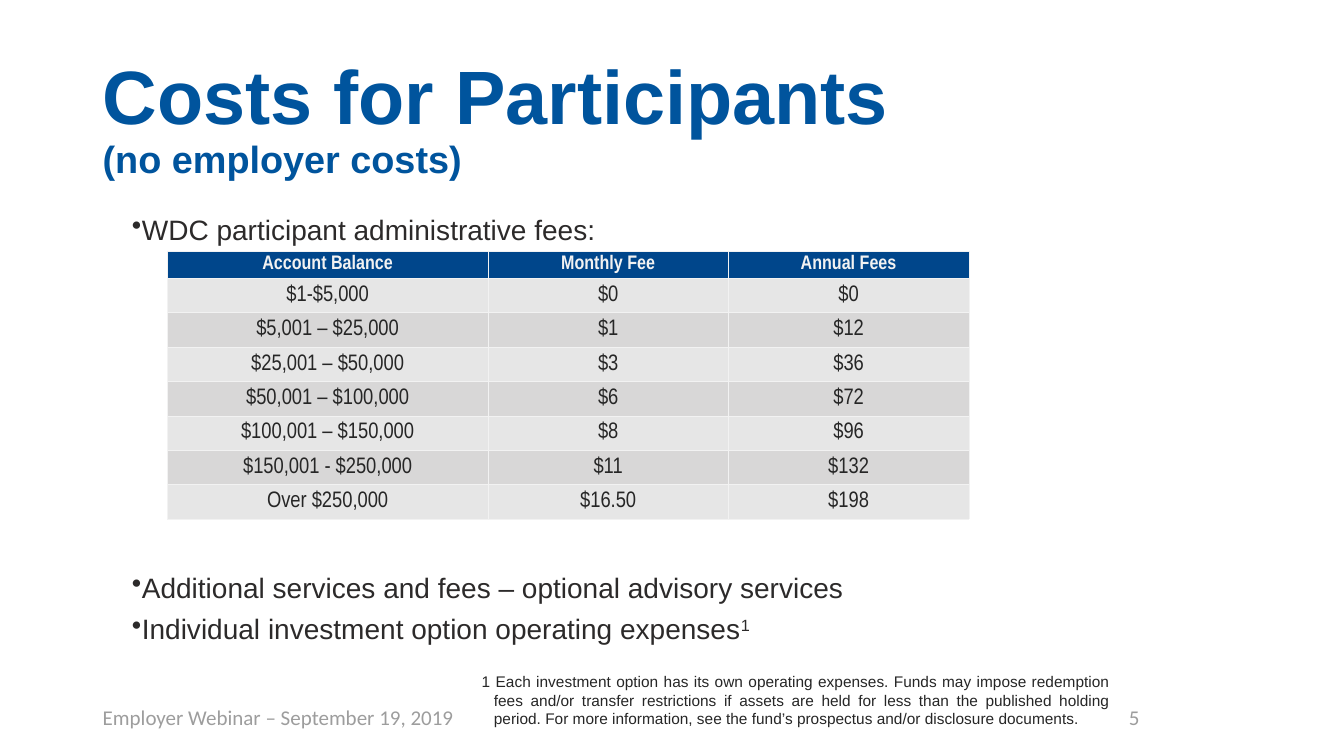
from lxml import etree
from pptx import Presentation
from pptx.dml.color import RGBColor
from pptx.enum.text import MSO_ANCHOR, PP_ALIGN
from pptx.oxml.ns import qn
from pptx.util import Inches, Pt

TOP, MIDDLE, BOTTOM = MSO_ANCHOR.TOP, MSO_ANCHOR.MIDDLE, MSO_ANCHOR.BOTTOM
LEFT, CENTER, RIGHT, JUSTIFY = PP_ALIGN.LEFT, PP_ALIGN.CENTER, PP_ALIGN.RIGHT, PP_ALIGN.JUSTIFY

TITLE_BLUE = RGBColor(0x00, 0x54, 0x9D)
HEADER_BLUE = RGBColor(0x00, 0x46, 0x8B)
BODY_INK = RGBColor(0x2C, 0x2A, 0x2A)
DARK_INK = RGBColor(0x26, 0x26, 0x26)
FOOTER_GRAY = RGBColor(0x9D, 0x9D, 0x9D)
OFF_WHITE = RGBColor(0xF2, 0xF2, 0xF2)
BANDS = (RGBColor(0xE6, 0xE6, 0xE6), RGBColor(0xD8, 0xD7, 0xD7))

FEES = [
    ("Account Balance", "Monthly Fee", "Annual Fees"),
    ("$1-$5,000", "$0", "$0"),
    ("$5,001 – $25,000", "$1", "$12"),
    ("$25,001 – $50,000", "$3", "$36"),
    ("$50,001 – $100,000", "$6", "$72"),
    ("$100,001 – $150,000", "$8", "$96"),
    ("$150,001 - $250,000", "$11", "$132"),
    ("Over $250,000", "$16.50", "$198"),
]
FOOTNOTE = (
    "1 Each investment option has its own operating expenses. Funds may impose "
    "redemption fees and/or transfer restrictions if assets are held for less than "
    "the published holding period. For more information, see the fund’s prospectus "
    "and/or disclosure documents."
)


def style(font, size, name, color, bold=False):
    """Set the look of a font."""
    font.size, font.name, font.bold = Pt(size), name, bold
    font.color.rgb = color


def add_text_frame(slide, box, anchor=TOP):
    """Add a wrapping text box at box (left, top, width, height in inches)."""
    frame = slide.shapes.add_textbox(*map(Inches, box)).text_frame
    frame.word_wrap = True
    frame.vertical_anchor = anchor
    return frame


def add_title(slide, box):
    """Place the two-line heading."""
    heading = add_text_frame(slide, box, BOTTOM).paragraphs[0]
    heading.text = "Costs for Participants\v(no employer costs)"
    heading.line_spacing = 0.9
    for run, size in zip(heading.runs, (54, 27)):
        style(run.font, size, "Arial", TITLE_BLUE, True)


def add_bullets(slide, box, items):
    """Place bulleted items, each a text and its superscript mark."""
    frame = add_text_frame(slide, box)
    for index, (text, mark) in enumerate(items):
        item = frame.add_paragraph() if index else frame.paragraphs[0]
        item.text = text
        item.line_spacing = 1.2
        item.space_before = Pt(1 if index else 0)
        properties = item._p.get_or_add_pPr()
        properties.set("marL", "0")
        properties.set("indent", str(-Inches(0.25)))
        etree.SubElement(properties, qn("a:buChar"), char="•")
        if mark:
            superscript = item.add_run()
            superscript.text = mark
            superscript.font._element.set("baseline", "30000")
        for run in item.runs:
            style(run.font, 20, "Arial", BODY_INK)


def add_borders(cell):
    """Draw a thin line on all four sides of a cell."""
    properties = cell._tc.get_or_add_tcPr()
    for index, side in enumerate("LRTB"):
        line = etree.Element(qn(f"a:ln{side}"), w=str(Pt(0.5)))
        fill = etree.SubElement(line, qn("a:solidFill"))
        etree.SubElement(fill, qn("a:srgbClr"), val=str(OFF_WHITE))
        properties.insert(index, line)


def add_fee_table(slide, box):
    """Place the fee table with a header row and banded rows."""
    table = slide.shapes.add_table(len(FEES), len(FEES[0]), *map(Inches, box)).table
    for column, share in zip(table.columns, (0.4, 0.3, 0.3)):
        column.width = Inches(box[2] * share)
    header_height = 0.27
    row_height = (box[3] - header_height) / (len(FEES) - 1)
    for r, values in enumerate(FEES):
        table.rows[r].height = Inches(row_height if r else header_height)
        for c, value in enumerate(values):
            cell = table.cell(r, c)
            cell.margin_top = cell.margin_bottom = 0
            cell.vertical_anchor = MIDDLE
            cell.fill.solid()
            cell.fill.fore_color.rgb = BANDS[(r - 1) % 2] if r else HEADER_BLUE
            add_borders(cell)
            entry = cell.text_frame.paragraphs[0]
            entry.text = value
            entry.alignment = CENTER
            look = (16, "Arial Narrow", DARK_INK) if r else (14, "Arial Narrow", OFF_WHITE, True)
            style(entry.runs[0].font, *look)


def add_footnote(slide, box):
    """Place the justified footnote with a hanging indent."""
    note = add_text_frame(slide, box).paragraphs[0]
    note.text = FOOTNOTE
    note.alignment = JUSTIFY
    properties = note._p.get_or_add_pPr()
    properties.set("marL", str(Inches(0.12)))
    properties.set("indent", str(-Inches(0.12)))
    style(note.runs[0].font, 11, "Arial", DARK_INK)


def add_footer(slide, box):
    """Place the event name at the left and the page number at the right."""
    left, top, width, height = box
    number_width = 1.45
    parts = (
        ("Employer Webinar – September 19, 2019", left, 6.32, LEFT),
        ("5", left + width - number_width, number_width, RIGHT),
    )
    for text, part_left, part_width, alignment in parts:
        label = add_text_frame(slide, (part_left, top, part_width, height)).paragraphs[0]
        label.text = text
        label.alignment = alignment
        style(label.runs[0].font, 15, "Calibri", FOOTER_GRAY)


def main():
    """Build and save the slide."""
    deck = Presentation()
    deck.slide_width, deck.slide_height = Inches(13.33), Inches(7.5)
    slide = deck.slides.add_slide(deck.slide_layouts[6])
    add_footer(slide, (0.92, 6.94, 10.48, 0.35))
    add_title(slide, (0.92, 0.4, 11.5, 1.45))
    add_bullets(slide, (1.21, 1.99, 10.9, 0.48), [("WDC participant administrative fees:", "")])
    add_bullets(slide, (1.21, 5.54, 10.9, 0.88), [
        ("Additional services and fees – optional advisory services", ""),
        ("Individual investment option operating expenses", "1"),
    ])
    add_fee_table(slide, (1.66, 2.49, 7.95, 2.66))
    add_footnote(slide, (4.68, 6.62, 6.43, 0.86))
    deck.save("out.pptx")


if __name__ == "__main__":
    main()
